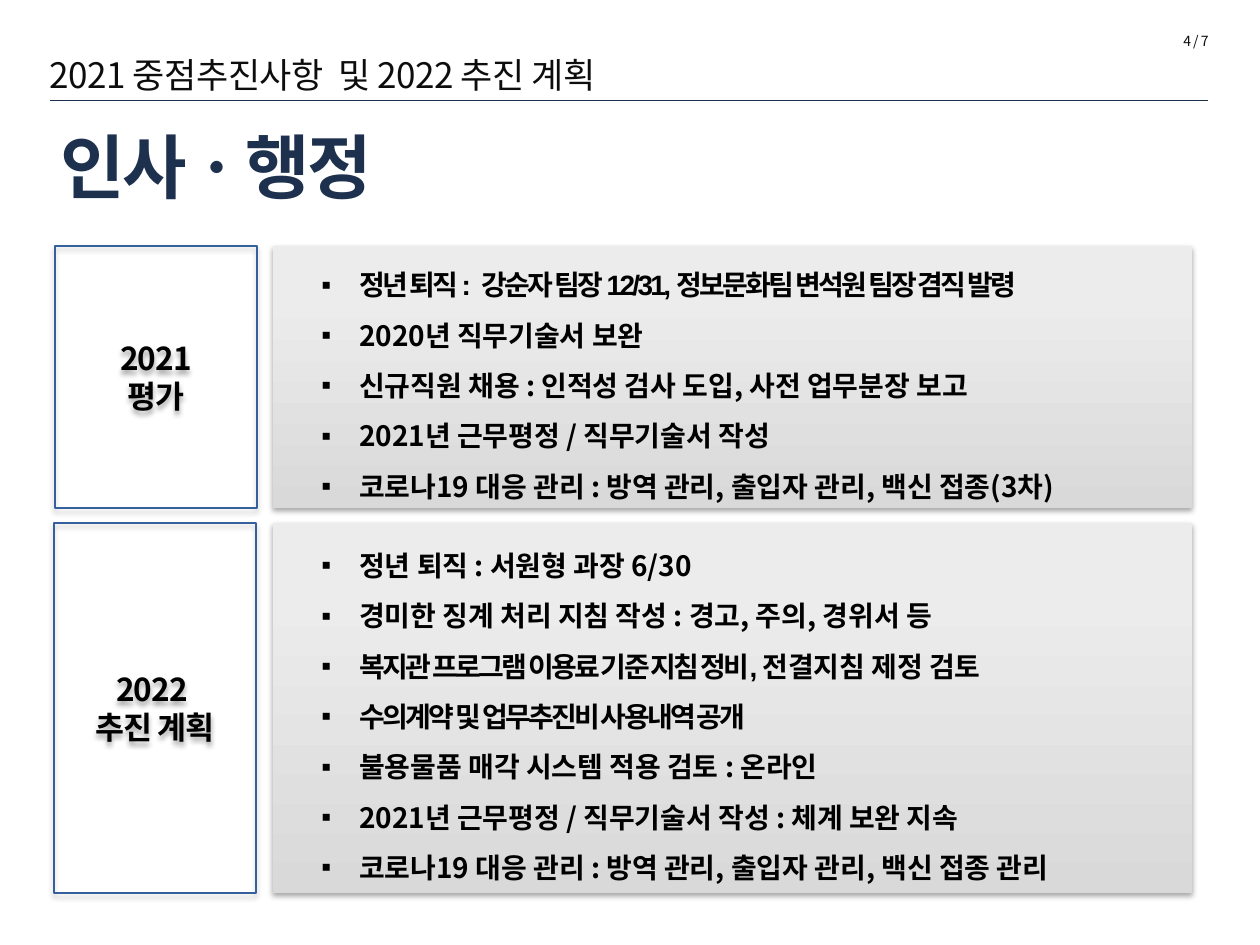
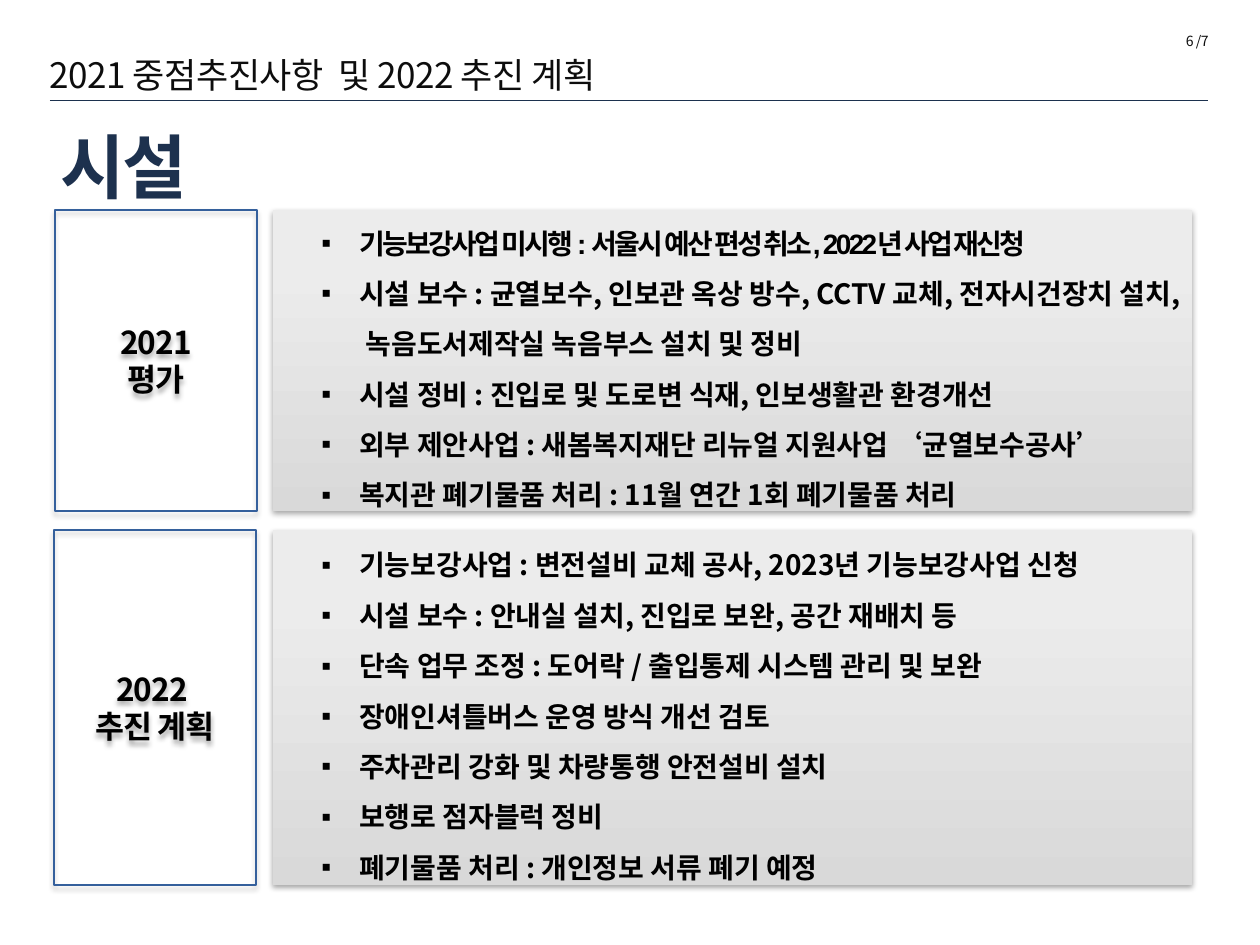
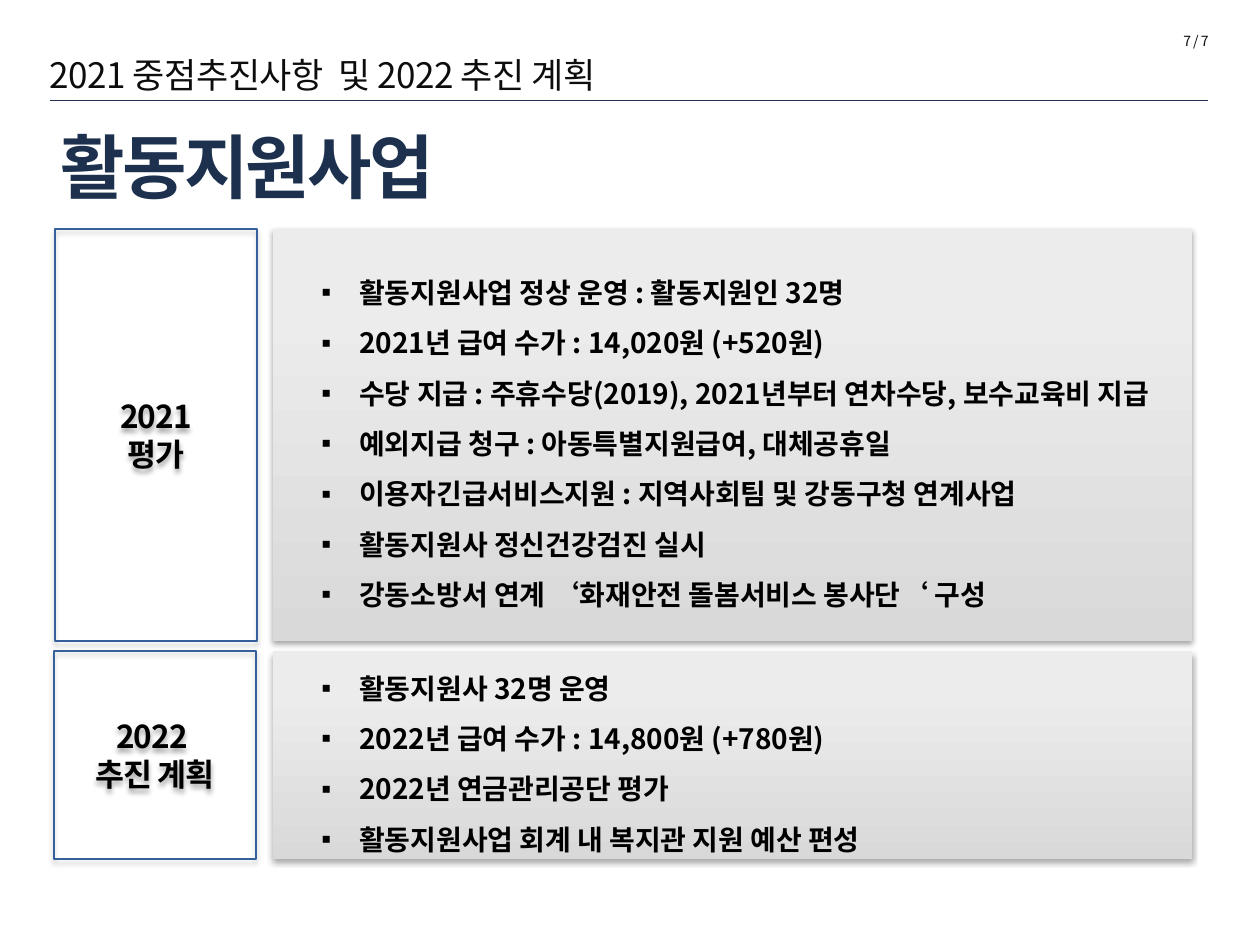
from lxml import etree
from pptx import Presentation
from pptx.dml.color import RGBColor
from pptx.enum import shapes, text
from pptx.oxml import ns
from pptx import util as u

# Scale and shared look
EMU_PER_PX = 914400 / 126
NAVY = RGBColor(0x1C, 0x31, 0x4E)
TITLE_NAVY = RGBColor(0x1D, 0x31, 0x4E)
BLUE = RGBColor(0x35, 0x60, 0x9C)
INK = RGBColor(0x0D, 0x0D, 0x0D)
BLACK = RGBColor(0, 0, 0)
GREY_DARK = RGBColor(0xD9, 0xD9, 0xD9)
GREY_LIGHT = RGBColor(0xEC, 0xEC, 0xEC)
KOREAN = "Noto Sans CJK KR"
LATIN = "Arial"

# Text styles: font attributes, plus letter spacing in hundredths of a point
HEADER = {"size": u.Pt(20), "name": KOREAN}, INK, -30
PAGE = {"size": u.Pt(8), "name": KOREAN}, INK, -30
TITLE = {"size": u.Pt(40), "name": KOREAN, "bold": True}, TITLE_NAVY, -150
LABEL = {"size": u.Pt(18), "name": KOREAN, "bold": True}, BLACK, -50
BODY = {"size": u.Pt(16), "name": KOREAN, "bold": True}, BLACK, 0
TIGHT = {"size": u.Pt(16), "name": LATIN, "bold": True}, BLACK, -150

# Columns shared by every slide
LABEL_WIDTH, PANEL_LEFT, PANEL_WIDTH = 202, 273, 919
LABELS = [(55, ["2021", "평가"]), (54, ["2022 ", "추진 계획"])]

# Each slide: page, title, then (top, height, items) for review and plan.
# An item is a string, or a list of (text, style) runs.
SLIDES = [
    ("4 / 7", " 인사ㆍ행정", [
        (246, 262, [
            [("정년 퇴직 :  강순자 팀장 12/31, 정보문화팀 변석원 팀장 겸직 발령", TIGHT)],
            "2020년 직무기술서 보완",
            "신규직원 채용 : 인적성 검사 도입, 사전 업무분장 보고",
            "2021년 근무평정 / 직무기술서 작성",
            "코로나19 대응 관리 : 방역 관리, 출입자 관리, 백신 접종(3차)",
        ]),
        (523, 370, [
            "정년 퇴직 : 서원형 과장 6/30",
            "경미한 징계 처리 지침 작성 : 경고, 주의, 경위서 등",
            [("복지관 프로그램 이용료 기준 지침 정비, ", TIGHT), ("전결지침 제정 검토", BODY)],
            [("수의계약 및 업무추진비 사용내역 공개", TIGHT)],
            "불용물품 매각 시스템 적용 검토 : 온라인",
            "2021년 근무평정 / 직무기술서 작성 : 체계 보완 지속",
            "코로나19 대응 관리 : 방역 관리, 출입자 관리, 백신 접종 관리",
        ]),
    ]),
    ("6 /7", " 시설", [
        (210, 301, [
            [("기능보강사업 미시행 : 서울시 예산 편성 취소, 2022년 사업 재신청", TIGHT)],
            "시설 보수 : 균열보수, 인보관 옥상 방수, CCTV 교체, 전자시건장치 설치, "
            "녹음도서제작실 녹음부스 설치 및 정비",
            "시설 정비 : 진입로 및 도로변 식재, 인보생활관 환경개선",
            "외부 제안사업 : 새봄복지재단 리뉴얼 지원사업 ‘균열보수공사’",
            "복지관 폐기물품 처리 : 11월 연간 1회 폐기물품 처리",
        ]),
        (530, 355, [
            "기능보강사업 : 변전설비 교체 공사, 2023년 기능보강사업 신청",
            "시설 보수 : 안내실 설치, 진입로 보완, 공간 재배치 등",
            "단속 업무 조정 : 도어락 / 출입통제 시스템 관리 및 보완",
            "장애인셔틀버스 운영 방식 개선 검토",
            "주차관리 강화 및 차량통행 안전설비 설치",
            "보행로 점자블럭 정비",
            "폐기물품 처리 : 개인정보 서류 폐기 예정",
        ]),
    ]),
    ("7 / 7", " 활동지원사업", [
        (229, 412, [
            "활동지원사업 정상 운영 : 활동지원인 32명",
            "2021년 급여 수가 : 14,020원 (+520원)",
            "수당 지급 : 주휴수당(2019), 2021년부터 연차수당, 보수교육비 지급",
            "예외지급 청구 : 아동특별지원급여, 대체공휴일",
            "이용자긴급서비스지원 : 지역사회팀 및 강동구청 연계사업",
            "활동지원사 정신건강검진 실시",
            "강동소방서 연계 ‘화재안전 돌봄서비스 봉사단‘ 구성",
        ]),
        (651, 208, [
            "활동지원사 32명 운영",
            "2022년 급여 수가 : 14,800원 (+780원)",
            "2022년 연금관리공단 평가",
            "활동지원사업 회계 내 복지관 지원 예산 편성",
        ]),
    ]),
]


def px(length):
    return u.Emu(round(length * EMU_PER_PX))


def add_child(parent, tag, **attributes):
    values = {name: str(value) for name, value in attributes.items()}
    return etree.SubElement(parent, ns.qn(tag), values)


def add_run(paragraph, words, style):
    font_values, color, spacing = style
    run = paragraph.add_run()
    run.text = words
    for name, value in font_values.items():
        setattr(run.font, name, value)
    run.font.color.rgb = color
    properties = run.font._element
    properties.set("spc", str(spacing))
    add_child(properties, "a:ea", typeface=KOREAN)


def add_paragraphs(frame, items, style, align, bulleted=False):
    for index, item in enumerate(items):
        paragraph = frame.add_paragraph() if index else frame.paragraphs[0]
        paragraph.alignment = align
        if bulleted:
            add_bullet(paragraph)
        for words, run_style in [(item, style)] if isinstance(item, str) else item:
            add_run(paragraph, words, run_style)


def add_bullet(paragraph):
    paragraph.line_spacing = 1.5
    properties = paragraph._p.get_or_add_pPr()
    properties.set("marL", str(px(74)))
    properties.set("indent", str(px(-38)))
    add_child(properties, "a:buFont", typeface=LATIN)
    add_child(properties, "a:buChar", char="▪")


def add_text(slide, box, words, style, align=text.PP_ALIGN.LEFT, anchor=text.MSO_ANCHOR.TOP):
    frame = slide.shapes.add_textbox(*map(px, box)).text_frame
    frame.word_wrap = True
    frame.vertical_anchor = anchor
    add_paragraphs(frame, [words], style, align)


def add_rule(slide, left, right, top):
    rule = slide.shapes.add_connector(
        shapes.MSO_CONNECTOR.STRAIGHT, px(left), px(top), px(right), px(top))
    rule.line.color.rgb = NAVY
    rule.line.width = u.Pt(0.25)
    add_child(rule._element.spPr, "a:effectLst")


def add_box(slide, box):
    shape = slide.shapes.add_shape(shapes.MSO_SHAPE.RECTANGLE, *map(px, box))
    shape.text_frame.word_wrap = True
    shape.text_frame.vertical_anchor = text.MSO_ANCHOR.MIDDLE
    return shape


def add_soft_shadow(shape):
    shape.shadow.inherit = False
    effects = shape._element.spPr.find(ns.qn("a:effectLst"))
    shadow = add_child(effects, "a:outerShdw", blurRad=u.Pt(3.1), dist=u.Pt(1.8),
                       dir=5400000, rotWithShape=0)
    color = add_child(shadow, "a:srgbClr", val=BLACK)
    add_child(color, "a:alpha", val=35000)


def add_label(slide, box, lines):
    label = add_box(slide, box)
    label.fill.background()
    label.line.color.rgb = BLUE
    label.line.width = u.Pt(0.75)
    add_soft_shadow(label)
    add_paragraphs(label.text_frame, lines, LABEL, text.PP_ALIGN.CENTER)


def add_panel(slide, box, items):
    panel = add_box(slide, box)
    panel.fill.gradient()
    panel.fill.gradient_angle = 90
    stops = [(0, GREY_DARK), (0.8, GREY_LIGHT)]
    for stop, (position, color) in zip(panel.fill.gradient_stops, stops):
        stop.position = position
        stop.color.rgb = color
    panel.line.fill.background()
    add_soft_shadow(panel)
    add_paragraphs(panel.text_frame, items, BODY, text.PP_ALIGN.LEFT, bulleted=True)


def add_frame(slide, page, title):
    add_text(slide, (37, 47, 1003, 55), "2021 중점추진사항  및 2022 추진 계획", HEADER)
    add_rule(slide, 50, 1208, 100)
    add_text(slide, (1003, 26, 218, 30), page, PAGE, align=text.PP_ALIGN.RIGHT)
    add_text(slide, (35, 103, 1154, 126), title, TITLE, anchor=text.MSO_ANCHOR.MIDDLE)


def main():
    presentation = Presentation()
    presentation.slide_width, presentation.slide_height = px(1260), px(945)
    for page, title, sections in SLIDES:
        slide = presentation.slides.add_slide(presentation.slide_layouts[6])
        add_frame(slide, page, title)
        for (left, lines), (top, height, items) in zip(LABELS, sections):
            add_label(slide, (left, top, LABEL_WIDTH, height), lines)
            add_panel(slide, (PANEL_LEFT, top, PANEL_WIDTH, height), items)
    presentation.save("out.pptx")


if __name__ == "__main__":
    main()
